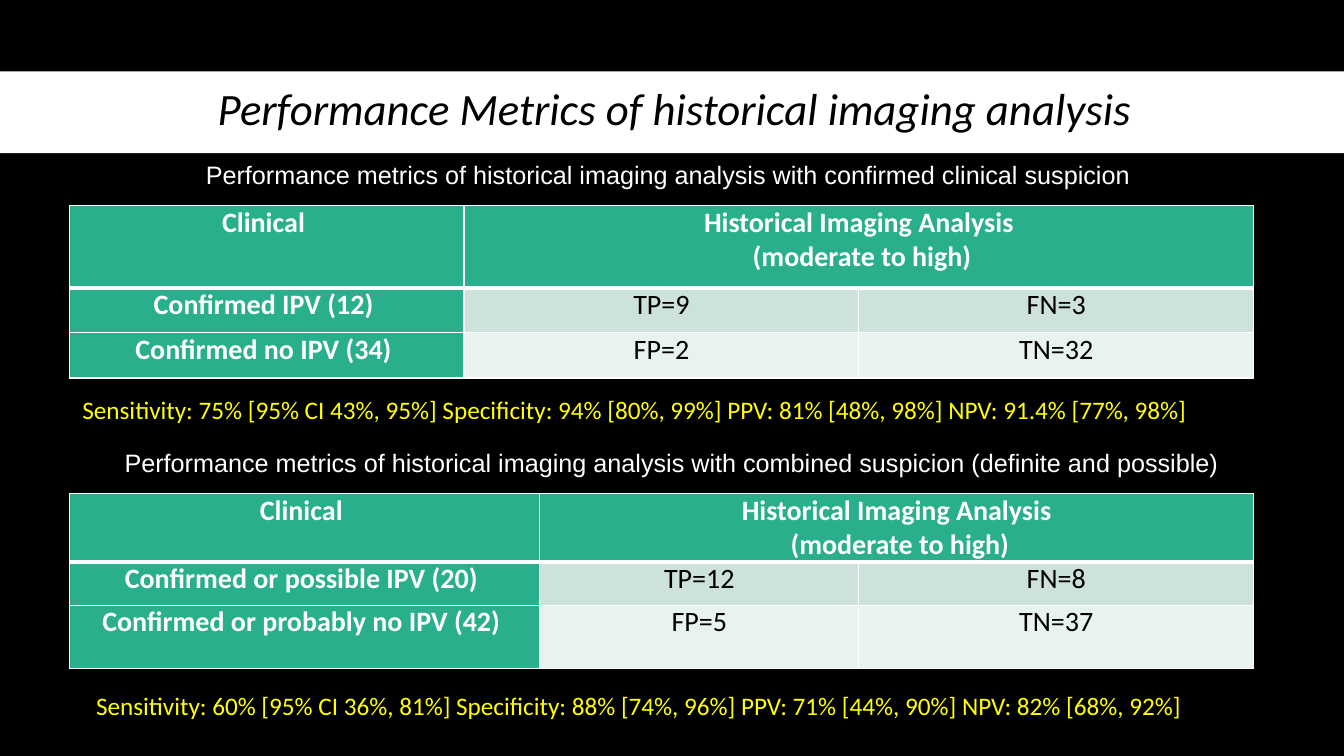
from dataclasses import dataclass

from lxml import etree
from pptx import Presentation
from pptx.dml.color import RGBColor
from pptx.enum.shapes import MSO_SHAPE
from pptx.enum.text import MSO_ANCHOR, MSO_AUTO_SIZE, PP_ALIGN
from pptx.oxml.ns import qn
from pptx.util import Emu, Pt

EMU_PER_PX = 9525
RECTANGLE = MSO_SHAPE.RECTANGLE
CENTER = PP_ALIGN.CENTER
LEFT = PP_ALIGN.LEFT
TOP = MSO_ANCHOR.TOP
MIDDLE = MSO_ANCHOR.MIDDLE
NO_FIT = MSO_AUTO_SIZE.NONE
GROW = MSO_AUTO_SIZE.SHAPE_TO_FIT_TEXT


@dataclass(frozen=True)
class Theme:
    black: str = "000000"
    white: str = "FFFFFF"
    green: str = "29AF8C"
    bands: tuple = ("CDE3DA", "E8F2EE")
    yellow: str = "FFFF00"
    sans: str = "Calibri"
    caption_font: str = "Arial"
    title_size: int = 32
    table_size: int = 20
    note_size: int = 18
    thin_rule: int = 1
    thick_rule: int = 3


THEME = Theme()
TITLE_FORMAT = {"name": THEME.sans, "size": Pt(THEME.title_size), "italic": True}
HEADING_FORMAT = {"name": THEME.sans, "size": Pt(THEME.table_size), "bold": True}
COUNT_FORMAT = {**HEADING_FORMAT, "bold": False}
CAPTION_FORMAT = {"name": THEME.caption_font, "size": Pt(THEME.note_size)}
METRICS_FORMAT = {"name": THEME.sans, "size": Pt(THEME.note_size)}
CELL_FORMAT = {
    "margin_left": Emu(12 * EMU_PER_PX),
    "margin_right": Emu(12 * EMU_PER_PX),
    "margin_top": 0,
    "margin_bottom": 0,
    "vertical_anchor": TOP,
}

HEADER = ("Clinical ", "Historical Imaging Analysis\n (moderate to high)", "")
TABLES = (
    {
        "origin": (66, 196),
        "columns": (376, 376, 376),
        "heights": (78, 43, 43),
        "rows": (
            HEADER,
            ("Confirmed IPV (12) ", "TP=9", "FN=3"),
            ("Confirmed no IPV (34) ", "FP=2", "TN=32"),
        ),
    },
    {
        "origin": (66, 470),
        "columns": (448, 304, 376),
        "heights": (60, 41, 60),
        "rows": (
            HEADER,
            ("Confirmed or possible IPV (20) ", "TP=12", "FN=8"),
            ("Confirmed or probably no IPV (42) ", "FP=5", "TN=37"),
        ),
    },
)
CAPTIONS = (
    ((69, 147, 1141, 38), "Performance metrics of historical imaging analysis with confirmed clinical suspicion "),
    ((69, 421, 1141, 38), "Performance metrics of historical imaging analysis with combined suspicion (definite and possible)"),
)
METRICS = (
    ((69, 371, 1144, 38), "Sensitivity: 75% [95% CI 43%, 95%] Specificity: 94% [80%, 99%] PPV: 81% [48%, 98%] NPV: 91.4% [77%, 98%]"),
    ((82, 653, 1114, 38), "Sensitivity: 60% [95% CI 36%, 81%] Specificity: 88% [74%, 96%] PPV: 71% [44%, 90%] NPV: 82% [68%, 92%]"),
)


def px(*lengths):
    return [Emu(length * EMU_PER_PX) for length in lengths]


def apply(target, values):
    for attribute, value in values.items():
        setattr(target, attribute, value)


def paint(fill, color):
    fill.solid()
    fill.fore_color.rgb = RGBColor.from_string(color)


def write(frame, text, font_format, color, alignment):
    frame.text = text
    for paragraph in frame.paragraphs:
        paragraph.alignment = alignment
        for run in paragraph.runs:
            apply(run.font, font_format)
            run.font.color.rgb = RGBColor.from_string(color)


def add_band(slide, box):
    band = slide.shapes.add_shape(RECTANGLE, *px(*box))
    band.shadow.inherit = False
    paint(band.fill, THEME.white)
    band.line.fill.background()
    tree = slide.shapes.title.element.getparent()
    tree.insert(2, band.element)


def set_title(slide, box, text):
    title = slide.shapes.title
    apply(title, dict(zip(("left", "top", "width", "height"), px(*box))))
    frame = title.text_frame
    apply(frame, {"vertical_anchor": MIDDLE, "word_wrap": True, "auto_size": NO_FIT})
    write(frame, text, TITLE_FORMAT, THEME.black, CENTER)
    frame.paragraphs[0].line_spacing = 0.9


def add_note(slide, box, text, font_format, color, alignment):
    frame = slide.shapes.add_textbox(*px(*box)).text_frame
    apply(frame, {"word_wrap": True, "auto_size": GROW})
    write(frame, text, font_format, color, alignment)


def add_borders(cell, row):
    widths = {
        "a:lnL": THEME.thin_rule,
        "a:lnR": THEME.thin_rule,
        "a:lnT": THEME.thick_rule if row == 1 else THEME.thin_rule,
        "a:lnB": THEME.thick_rule if row == 0 else THEME.thin_rule,
    }
    properties = cell._tc.get_or_add_tcPr()
    for side, width in widths.items():
        line = etree.SubElement(properties, qn(side), w=str(Pt(width)))
        solid = etree.SubElement(line, qn("a:solidFill"))
        etree.SubElement(solid, qn("a:srgbClr"), val=THEME.white)


def format_cell(cell, row, column, text):
    is_heading = row == 0 or column == 0
    apply(cell, CELL_FORMAT)
    add_borders(cell, row)
    paint(cell.fill, THEME.green if is_heading else THEME.bands[row - 1])
    write(
        cell.text_frame,
        text,
        HEADING_FORMAT if is_heading else COUNT_FORMAT,
        THEME.white if is_heading else THEME.black,
        CENTER,
    )


def add_confusion_table(slide, origin, columns, heights, rows):
    box = px(*origin, sum(columns), sum(heights))
    table = slide.shapes.add_table(len(rows), len(columns), *box).table
    for column, width in zip(table.columns, px(*columns)):
        column.width = width
    for row, height in zip(table.rows, px(*heights)):
        row.height = height
    for row, texts in enumerate(rows):
        for column, text in enumerate(texts):
            format_cell(table.cell(row, column), row, column, text)
    table.cell(0, 1).merge(table.cell(0, 2))


def main():
    presentation = Presentation()
    apply(presentation, dict(zip(("slide_width", "slide_height"), px(1280, 720))))
    slide = presentation.slides.add_slide(presentation.slide_layouts[5])
    paint(slide.background.fill, THEME.black)
    add_band(slide, (0, 68, 1280, 78))
    set_title(slide, (59, 67, 1177, 78), "Performance Metrics of historical imaging analysis ")
    for confusion in TABLES:
        add_confusion_table(slide, **confusion)
    for box, text in CAPTIONS:
        add_note(slide, box, text, CAPTION_FORMAT, THEME.white, CENTER)
    for box, text in METRICS:
        add_note(slide, box, text, METRICS_FORMAT, THEME.yellow, LEFT)
    presentation.save("out.pptx")


if __name__ == "__main__":
    main()
